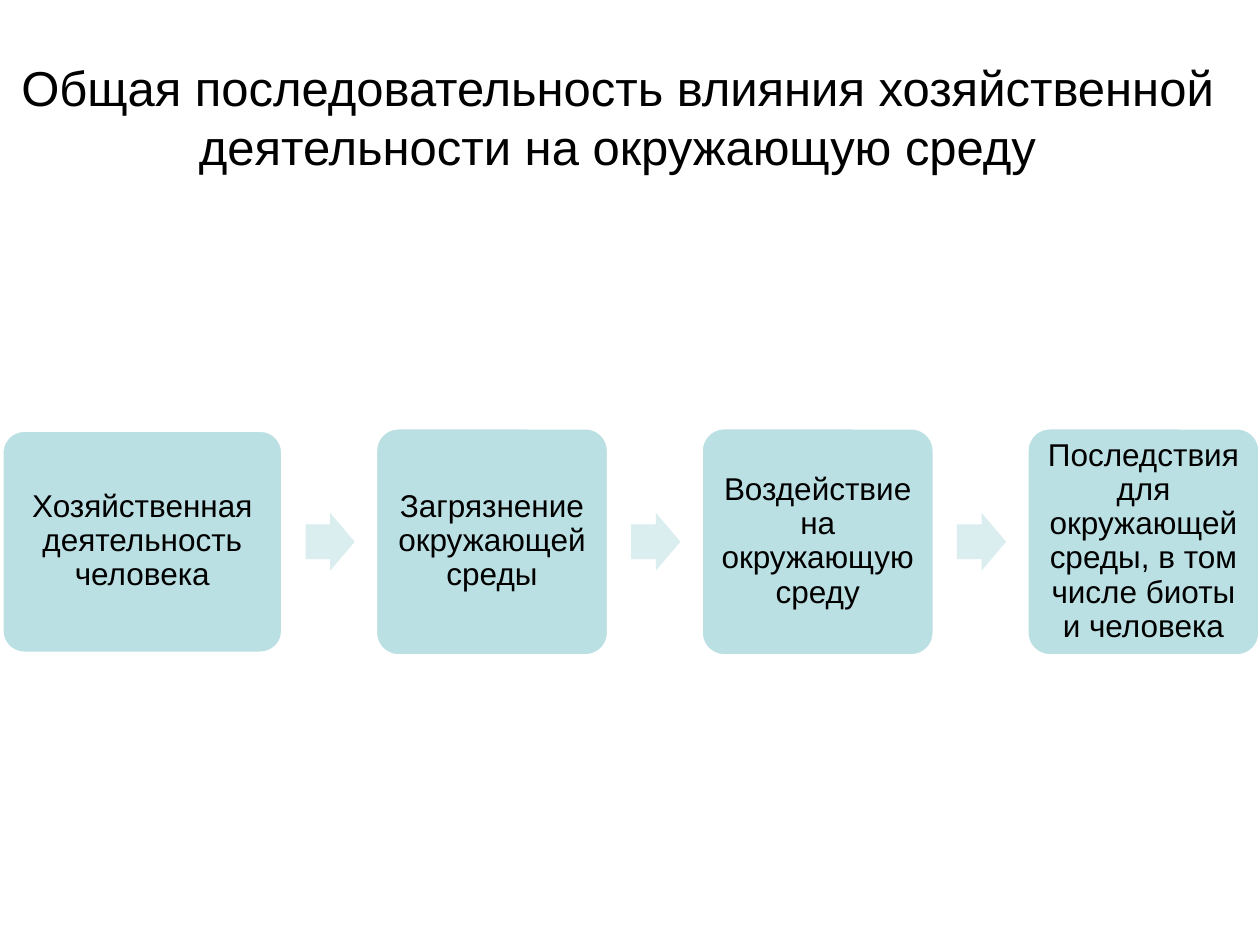
from dataclasses import dataclass

from pptx import Presentation
from pptx.dml.color import RGBColor
from pptx.enum.shapes import MSO_SHAPE
from pptx.enum.text import MSO_ANCHOR, PP_ALIGN
from pptx.util import Inches, Pt

ROUND_RECT, RIGHT_ARROW = MSO_SHAPE.ROUNDED_RECTANGLE, MSO_SHAPE.RIGHT_ARROW
MIDDLE, CENTER = MSO_ANCHOR.MIDDLE, PP_ALIGN.CENTER
TITLE_ONLY = 5


@dataclass(frozen=True)
class Theme:
    font: str = "Arial"
    title_size: int = 28
    step_size: int = 18
    text: str = "000000"
    box: str = "BBE0E3"
    arrow: str = "DAEDEF"
    outline: str = "FFFFFF"


THEME = Theme()

TITLE = "Общая последовательность влияния хозяйственной деятельности на окружающую среду"
STEPS = [
    "Хозяйственная деятельность человека",
    "Загрязнение окружающей среды",
    "Воздействие на окружающую среду",
    "Последствия для окружающей среды, в том числе биоты и человека",
]

# Flow geometry in inches: columns repeat at a fixed pitch along one axis
AXIS_Y = 4.3
BOX_W, BOX_H = 1.85, 1.81
FIRST_W, FIRST_H = 2.23, 1.77
ARROW_W, ARROW_H = 0.39, 0.46
GAP = 0.18
FLOW_RIGHT = 10
PITCH = BOX_W + GAP + ARROW_W + 0.165


def set_text(tf, text, size, inset, spacing):
    """Write one centred paragraph."""
    tf.text = text
    frame_format = {
        "word_wrap": True, "vertical_anchor": MIDDLE,
        "margin_left": inset[0], "margin_right": inset[0],
        "margin_top": inset[1], "margin_bottom": inset[1],
    }
    for name, value in frame_format.items():
        setattr(tf, name, Inches(value) if name.startswith("margin") else value)
    p = tf.paragraphs[0]
    p.alignment, p.line_spacing = CENTER, spacing
    font = p.runs[0].font
    for name, value in {"name": THEME.font, "size": Pt(size), "bold": False}.items():
        setattr(font, name, value)
    font.color.rgb = RGBColor.from_string(THEME.text)


def add_title(s):
    title = s.shapes.title
    box = {"left": 0, "top": 0.3, "width": 9.8, "height": 1.25}
    for name, value in box.items():
        setattr(title, name, Inches(value))
    set_text(title.text_frame, TITLE, THEME.title_size, (0.1, 0.05), 1.0)


def add_flow_shape(group, kind, left, width, height, fill, adjustments):
    """Add a filled shape centred on the flow axis."""
    sp = group.shapes.add_shape(
        kind, Inches(left), Inches(AXIS_Y - height / 2), Inches(width), Inches(height))
    sp.shadow.inherit = False
    sp.fill.solid()
    sp.fill.fore_color.rgb = RGBColor.from_string(fill)
    sp.line.fill.background()
    for i, value in enumerate(adjustments):
        sp.adjustments[i] = value
    return sp


def add_step(group, text, right, width, height):
    sp = add_flow_shape(group, ROUND_RECT, right - width, width, height, THEME.box, [0.1])
    sp.line.color.rgb = RGBColor.from_string(THEME.outline)
    sp.line.width = Pt(2)
    set_text(sp.text_frame, text, THEME.step_size, (0.07, 0.07), 0.9)


def add_arrow(group, left):
    add_flow_shape(group, RIGHT_ARROW, left, ARROW_W, ARROW_H, THEME.arrow, [0.6, 0.5])


def add_flow(s):
    group = s.shapes.add_group_shape()
    last = len(STEPS) - 1
    for i, text in enumerate(STEPS):
        right = FLOW_RIGHT - (last - i) * PITCH
        size = (FIRST_W, FIRST_H) if i == 0 else (BOX_W, BOX_H)
        add_step(group, text, right, *size)
        if i < last:
            add_arrow(group, right + GAP)


def main():
    prs = Presentation()
    prs.slide_width, prs.slide_height = Inches(10), Inches(7.5)
    s = prs.slides.add_slide(prs.slide_layouts[TITLE_ONLY])
    add_title(s)
    add_flow(s)
    prs.save("out.pptx")


if __name__ == "__main__":
    main()
